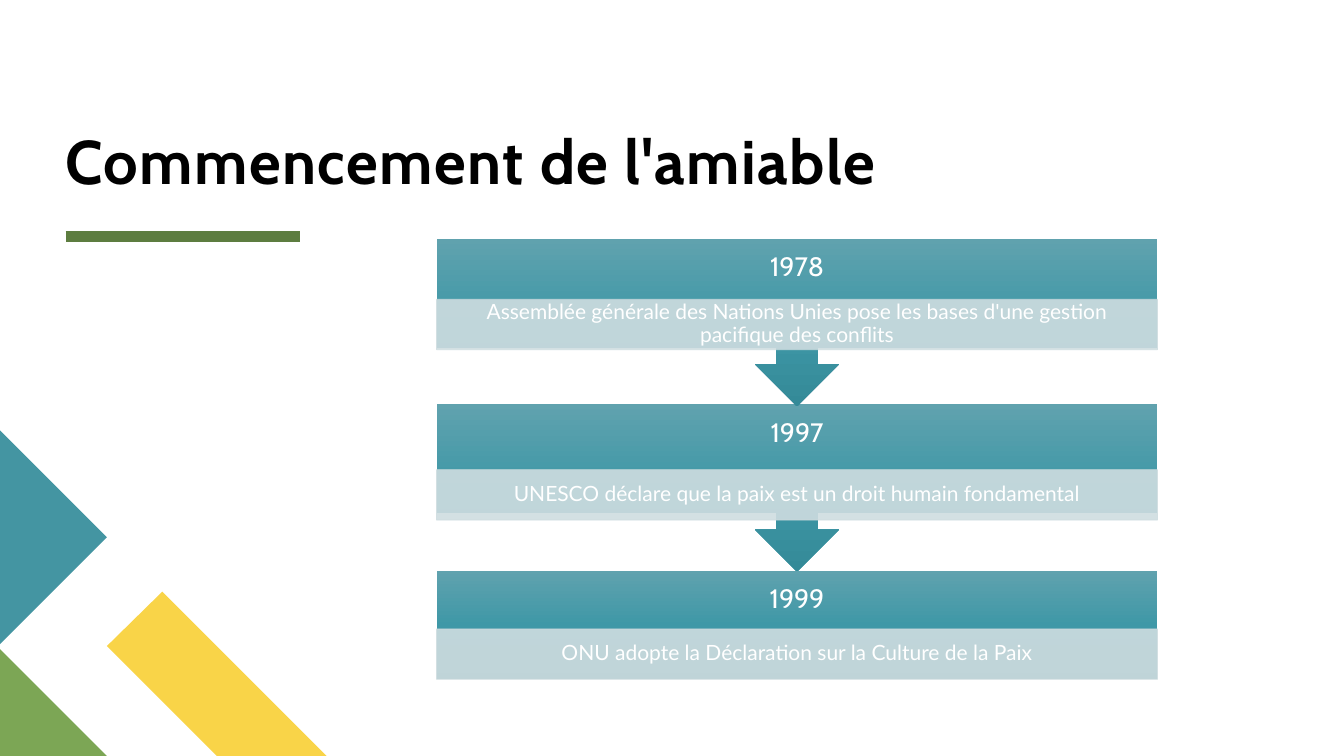
"""Build the slide on the beginnings of amicable settlement."""
from dataclasses import dataclass

from lxml import etree
from pptx import Presentation
from pptx.dml.color import RGBColor
from pptx.enum import shapes, text
from pptx.oxml import ns
from pptx.util import Inches, Pt

BLACK = RGBColor(0x00, 0x00, 0x00)
WHITE = RGBColor(0xFF, 0xFF, 0xFF)
OLIVE = RGBColor(0x5D, 0x7D, 0x40)
GREEN = RGBColor(0x7C, 0xA6, 0x55)
GOLD = RGBColor(0xF9, 0xD4, 0x48)
TEAL = RGBColor(0x44, 0x95, 0xA2)
PALE = RGBColor(0xCF, 0xDD, 0xE0)
RAMP = (
    (0, RGBColor(0x60, 0xA2, 0xAE)),
    (50, RGBColor(0x3F, 0x98, 0xA7)),
    (100, RGBColor(0x34, 0x8A, 0x98)),
)
LEFT, WIDTH = 4.33, 7.15
HEAD, BAR = 0.58, 0.5


@dataclass
class Step:
    year: str
    fact: str
    top: float
    bar: float
    last: bool = False


@dataclass
class Patch:
    points: list[tuple[float, float]]
    color: RGBColor


@dataclass
class Style:
    font: str
    size: float
    color: RGBColor = WHITE
    bold: bool = False
    align: text.PP_ALIGN = text.PP_ALIGN.CENTER
    anchor: text.MSO_ANCHOR = text.MSO_ANCHOR.MIDDLE
    pad: tuple[float, float] = (0, 0)
    lead: float = 0.9


TITLE = Style("Cabin", 44, BLACK, True, text.PP_ALIGN.LEFT,
              text.MSO_ANCHOR.BOTTOM, lead=0.8)
YEAR = Style("Cabin", 19, pad=(0.15, 0.15))
FACT = Style("Lato", 15, pad=(0.12, 0.02))

STEPS = [
    Step("1978", "Assemblée générale des Nations Unies pose les bases "
         "d'une gestion pacifique des conflits", 2.37, 2.97),
    Step("1997", "UNESCO déclare que la paix est un droit humain fondamental",
         4.01, 4.66),
    Step("1999", "ONU adopte la Déclaration sur la Culture de la Paix",
         5.66, 6.24, True),
]
PATCHES = [
    Patch([(3.24, 7.5), (2.15, 7.5), (1.06, 6.41), (1.61, 5.87)], GOLD),
    Patch([(1.06, 7.5), (0, 7.5), (0, 6.44)], GREEN),
    Patch([(0, 4.27), (1.06, 5.33), (0, 6.39)], TEAL),
]


def write(shape, words: str, style: Style):
    """Put one styled paragraph in a shape and return its run."""
    frame = shape.text_frame
    frame.word_wrap = True
    frame.vertical_anchor = style.anchor
    frame.margin_left = frame.margin_right = Inches(style.pad[0])
    frame.margin_top = frame.margin_bottom = Inches(style.pad[1])
    frame.text = words
    para = frame.paragraphs[0]
    para.alignment = style.align
    para.line_spacing = style.lead
    run = para.runs[0]
    run.font.name = style.font
    run.font.size = Pt(style.size)
    run.font.bold = style.bold
    run.font.color.rgb = style.color
    return run


def label(slide, box: tuple[float, ...], words: str, style: Style):
    """Add a text box and return its run."""
    shape = slide.shapes.add_textbox(*map(Inches, box))
    return write(shape, words, style)


def block(slide, kind: shapes.MSO_SHAPE, box: tuple[float, ...]):
    """Add a preset shape without a shadow or an outline."""
    shape = slide.shapes.add_shape(kind, *map(Inches, box))
    shape.shadow.inherit = False
    shape.line.fill.background()
    return shape


def shade(shape) -> None:
    """Fill a shape with the teal ramp from top to bottom."""
    shape.fill.gradient()
    grad = shape.fill._xPr.find(ns.qn("a:gradFill"))
    stops = grad.find(ns.qn("a:gsLst"))
    for old in list(stops):
        stops.remove(old)
    for spot, color in RAMP:
        stop = etree.SubElement(stops, ns.qn("a:gs"), pos=str(spot * 1000))
        etree.SubElement(stop, ns.qn("a:srgbClr"), val=str(color))
    shape.fill.gradient_angle = 270


def fade(shape) -> None:
    """Make the fill and line of a shape 90 percent opaque."""
    for color in shape._element.spPr.iter(ns.qn("a:srgbClr")):
        etree.SubElement(color, ns.qn("a:alpha"), val="90000")


def patch(slide, item: Patch) -> None:
    """Draw one corner polygon."""
    first, *rest = [(Inches(x), Inches(y)) for x, y in item.points]
    pen = slide.shapes.build_freeform(*first)
    pen.add_line_segments(rest, close=True)
    shape = pen.convert_to_shape()
    shape.shadow.inherit = False
    shape.fill.solid()
    shape.fill.fore_color.rgb = item.color
    shape.line.fill.background()


def rule(slide) -> None:
    """Draw the thick line below the title."""
    line = slide.shapes.add_connector(
        shapes.MSO_CONNECTOR.STRAIGHT, *map(Inches, (0.65, 2.35, 2.98, 2.35)))
    line.line.color.rgb = OLIVE
    line.line.width = Pt(8)
    etree.SubElement(line._element.spPr, ns.qn("a:effectLst"))


def stage(slide, step: Step) -> None:
    """Draw one dated step of the timeline."""
    kinds = shapes.MSO_SHAPE
    kind = kinds.RECTANGLE if step.last else kinds.DOWN_ARROW_CALLOUT
    high = 1.08 if step.last else 1.66
    shade(block(slide, kind, (LEFT, step.top, WIDTH, high)))
    label(slide, (LEFT, step.top, WIDTH, HEAD), step.year, YEAR)
    bar = block(slide, kinds.RECTANGLE, (LEFT, step.bar, WIDTH, BAR))
    bar.fill.solid()
    bar.fill.fore_color.rgb = PALE
    bar.line.color.rgb = PALE
    bar.line.width = Pt(0.5)
    fade(bar)
    write(bar, step.fact, FACT)


def main() -> None:
    """Build and save the slide."""
    deck = Presentation()
    deck.slide_width, deck.slide_height = Inches(13.33), Inches(7.5)
    slide = deck.slides.add_slide(deck.slide_layouts[6])
    rule(slide)
    for item in PATCHES:
        patch(slide, item)
    run = label(slide, (0.65, 0.11, 11.89, 1.84),
                "Commencement de l'amiable", TITLE)
    run.font._element.set("spc", "100")
    for step in reversed(STEPS):
        stage(slide, step)
    deck.save("out.pptx")


if __name__ == "__main__":
    main()
